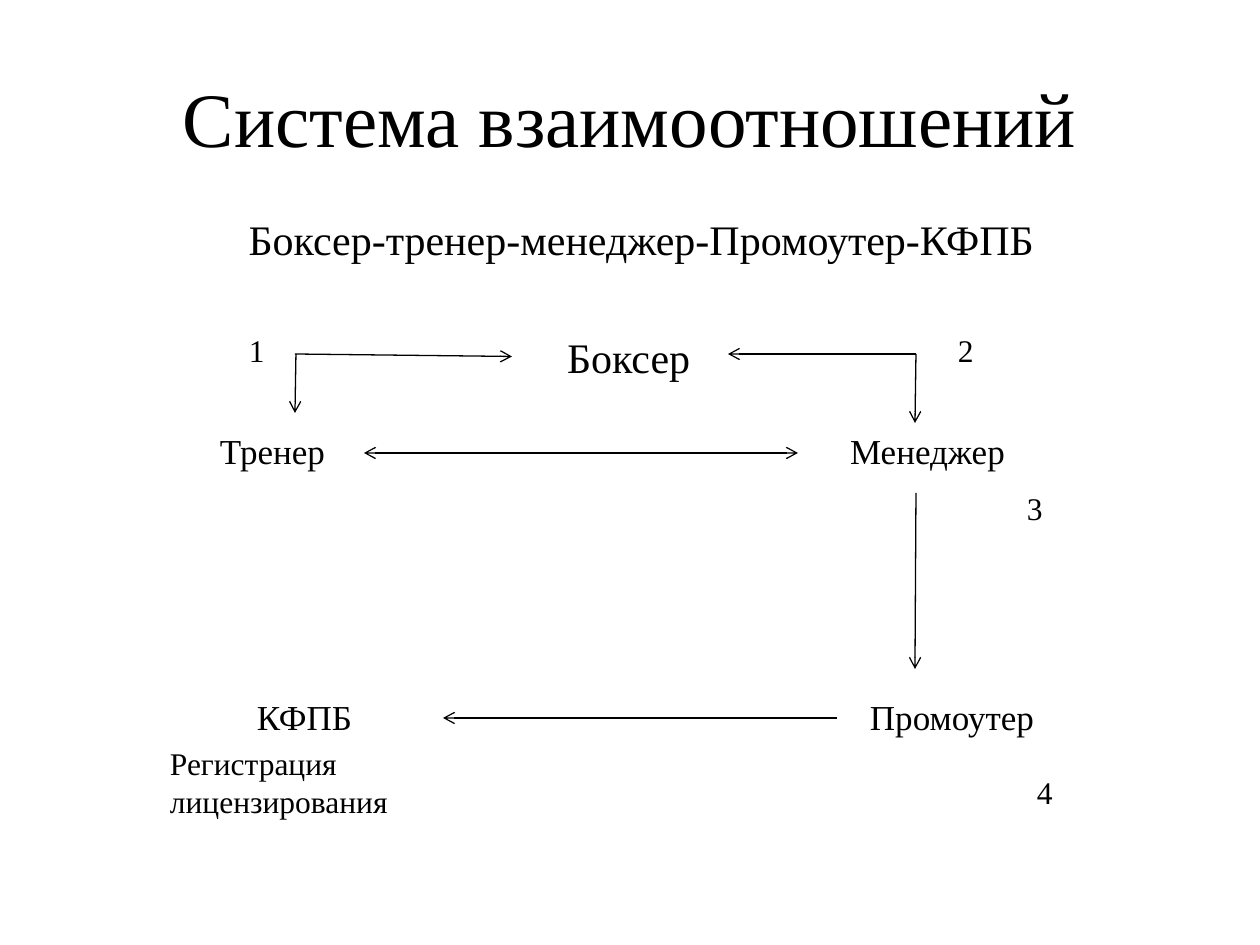
import pptx
import pptx.util
import pptx.dml.color
import pptx.enum.shapes
import pptx.enum.text
import pptx.oxml
import pptx.oxml.ns

PX = 914400 / 126
BLACK = pptx.dml.color.RGBColor(0, 0, 0)
WHITE = pptx.dml.color.RGBColor(255, 255, 255)
FONT = "Times New Roman"
LEFT = pptx.enum.text.PP_ALIGN.LEFT
CENTER = pptx.enum.text.PP_ALIGN.CENTER
MARGIN = 13


def px(*lengths):
    return [pptx.util.Emu(round(length * PX)) for length in lengths]


def write(frame, wording, size, align):
    frame.word_wrap = True
    paragraph = frame.paragraphs[0]
    paragraph.alignment = align
    run = paragraph.add_run()
    run.text = wording
    run.font.name = FONT
    run.font.size = pptx.util.Pt(size)
    run.font.color.rgb = BLACK


deck = pptx.Presentation()
deck.slide_width, deck.slide_height = px(1260, 945)
slide = deck.slides.add_slide(deck.slide_layouts[5])
slide.background.fill.solid()
slide.background.fill.fore_color.rgb = WHITE

heading = slide.shapes.title
heading.left, heading.top, heading.width, heading.height = px(63, 38, 1134, 158)
heading.text_frame.vertical_anchor = pptx.enum.text.MSO_ANCHOR.MIDDLE
write(heading.text_frame, "Система взаимоотношений", 44, CENTER)

labels = [
    ("Боксер-тренер-менеджер-Промоутер-КФПБ", 129, 207, 1024, 63, 24, CENTER, 0),
    ("Боксер", 512, 325, 295, 63, 24, LEFT, 42),
    ("Тренер", 207, 423, 266, 55, 20, LEFT, 0),
    ("Менеджер", 837, 423, 286, 55, 20, LEFT, 0),
    ("Промоутер", 857, 689, 315, 55, 20, LEFT, 0),
    ("КФПБ", 227, 689, 237, 55, 20, LEFT, 17),
    ("1", 236, 325, 39, 50, 18, LEFT, 0),
    ("2", 945, 325, 29, 50, 18, LEFT, 0),
    ("3", 1014, 483, 39, 50, 18, LEFT, 0),
    ("4", 1024, 767, 39, 50, 18, LEFT, 0),
    ("Регистрация лицензирования", 157, 738, 276, 89, 18, LEFT, 0),
]
boxes = {}
for wording, left, top, width, height, size, align, indent in labels:
    box = slide.shapes.add_textbox(*px(left, top, width, height))
    box.text_frame.auto_size = pptx.enum.text.MSO_AUTO_SIZE.SHAPE_TO_FIT_TEXT
    box.text_frame.margin_left = px(MARGIN + indent)[0]
    write(box.text_frame, wording, size, align)
    boxes[wording] = box

relations = [
    (296, 354, 295, 413, ["tailEnd"], None),
    (295, 354, 512, 357, ["tailEnd"], "Боксер"),
    (916, 354, 915, 423, ["tailEnd"], None),
    (916, 354, 728, 354, ["tailEnd"], None),
    (916, 493, 915, 669, ["tailEnd"], None),
    (837, 718, 443, 718, ["tailEnd"], None),
    (364, 453, 798, 453, ["headEnd", "tailEnd"], None),
]
for x1, y1, x2, y2, heads, target in relations:
    arrow = slide.shapes.add_connector(
        pptx.enum.shapes.MSO_CONNECTOR.STRAIGHT, *px(x1, y1, x2, y2))
    if target:
        arrow.end_connect(boxes[target], 1)
    arrow.line.color.rgb = BLACK
    arrow.line.width = pptx.util.Pt(0.75)
    for head in heads:
        line = arrow.line._get_or_add_ln()
        end = line.makeelement(pptx.oxml.ns.qn("a:" + head), {"type": "arrow"})
        line.append(end)
    properties = arrow._element.spPr
    properties.append(properties.makeelement(pptx.oxml.ns.qn("a:effectLst"), {}))

deck.save("out.pptx")
